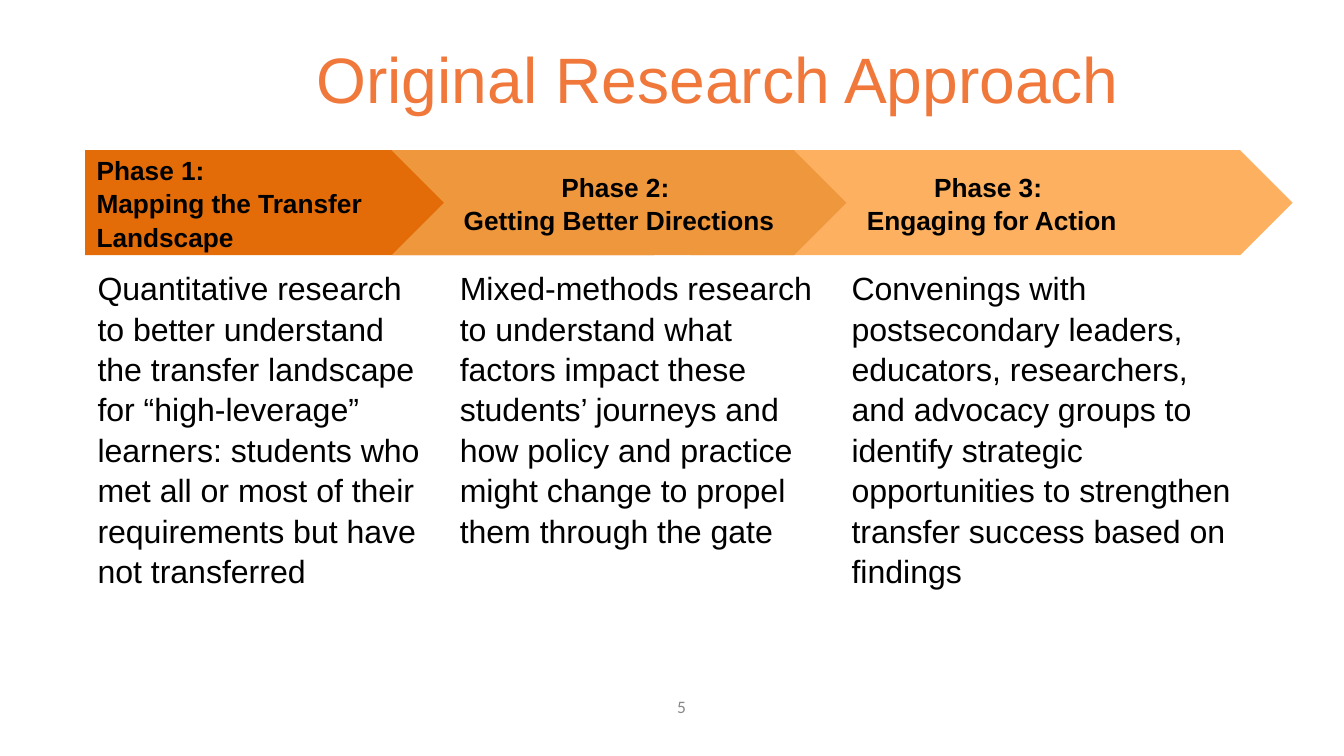
from pptx import Presentation
from pptx.dml.color import RGBColor
from pptx.enum.shapes import MSO_SHAPE
from pptx.enum.text import MSO_ANCHOR, PP_ALIGN
from pptx.util import Pt

TITLE_ORANGE = RGBColor(0xF0, 0x78, 0x3B)
DARK_ORANGE = RGBColor(0xE3, 0x6C, 0x09)
MID_ORANGE = RGBColor(0xEE, 0x97, 0x3D)
LIGHT_ORANGE = RGBColor(0xFD, 0xB1, 0x60)
BLACK = RGBColor(0, 0, 0)
GREY = RGBColor(0x88, 0x88, 0x88)

ARROW_TOP, ARROW_HEIGHT = 103, 72
BODY_TOP = ARROW_TOP + ARROW_HEIGHT
PHASE_MARGIN = 7.9

TITLE_FONT = {"name": "Arial", "size": Pt(44)}
PHASE_FONT = {"name": "Arial", "size": Pt(18), "bold": True}
BODY_FONT = {"name": "Arial", "size": Pt(22)}
NUMBER_FONT = {"name": "Calibri", "size": Pt(12)}

presentation = Presentation()
presentation.slide_width = Pt(921.6)
presentation.slide_height = Pt(518.4)
slide = presentation.slides.add_slide(presentation.slide_layouts[6])


def write_text(shape, text, font_format, color, alignment=PP_ALIGN.LEFT,
               anchor=MSO_ANCHOR.MIDDLE, margins=(7.2, 3.6), line_spacing=1.0):
    frame = shape.text_frame
    frame.word_wrap = True
    frame.vertical_anchor = anchor
    frame.margin_left = frame.margin_right = Pt(margins[0])
    frame.margin_top = frame.margin_bottom = Pt(margins[1])
    frame.text = text
    for paragraph in frame.paragraphs:
        paragraph.alignment = alignment
        paragraph.line_spacing = line_spacing
        for run in paragraph.runs:
            for name, value in font_format.items():
                setattr(run.font, name, value)
            run.font.color.rgb = color


def add_text(left, top, width, height, *text_options, **more_options):
    box = slide.shapes.add_textbox(Pt(left), Pt(top), Pt(width), Pt(height))
    write_text(box, *text_options, **more_options)


# Title and slide number
add_text(110.9, 10.1, 775.4, 86.4, "Original Research Approach ",
         TITLE_FONT, TITLE_ORANGE, PP_ALIGN.CENTER)
add_text(457.2, 470.9, 207.4, 27.4, "5", NUMBER_FONT, GREY)

# Phases from back to front: arrow (shape, left, width, fill, alignment, label),
# then body (left, width, height, text)
phases = [
    (MSO_SHAPE.CHEVRON, 473.8, 412.6, LIGHT_ORANGE, PP_ALIGN.CENTER,
     "Phase 3: \nEngaging for Action",
     576, 279.4, 246.2,
     "Convenings with postsecondary leaders, educators, researchers, and "
     "advocacy groups to identify strategic opportunities to strengthen "
     "transfer success based on findings"),
    (MSO_SHAPE.PENTAGON, 58.3, 426.2, DARK_ORANGE, PP_ALIGN.LEFT,
     "Phase 1:\nMapping the Transfer \vLandscape",
     59, 244.8, 259.9,
     "Quantitative research to better understand the transfer landscape for "
     "“high-leverage” learners: students who met all or most of their "
     "requirements but have not transferred"),
    (MSO_SHAPE.CHEVRON, 268.6, 311.8, MID_ORANGE, PP_ALIGN.CENTER,
     "Phase 2: \nGetting Better Directions",
     307.4, 270.7, 246.2,
     "Mixed-methods research to understand what factors impact these "
     "students’ journeys and how policy and practice might change to propel "
     "them through the gate"),
]
phase_layout = {"margins": (PHASE_MARGIN, PHASE_MARGIN), "line_spacing": 1.05}

for (kind, left, width, fill, alignment, label,
     body_left, body_width, body_height, body) in phases:
    arrow = slide.shapes.add_shape(kind, Pt(left), Pt(ARROW_TOP),
                                   Pt(width), Pt(ARROW_HEIGHT))
    arrow.shadow.inherit = False
    arrow.fill.solid()
    arrow.fill.fore_color.rgb = fill
    arrow.line.fill.background()
    write_text(arrow, label, PHASE_FONT, BLACK, alignment, **phase_layout)
    add_text(body_left, BODY_TOP, body_width, body_height, body, BODY_FONT,
             BLACK, anchor=MSO_ANCHOR.TOP, **phase_layout)

presentation.save("out.pptx")
